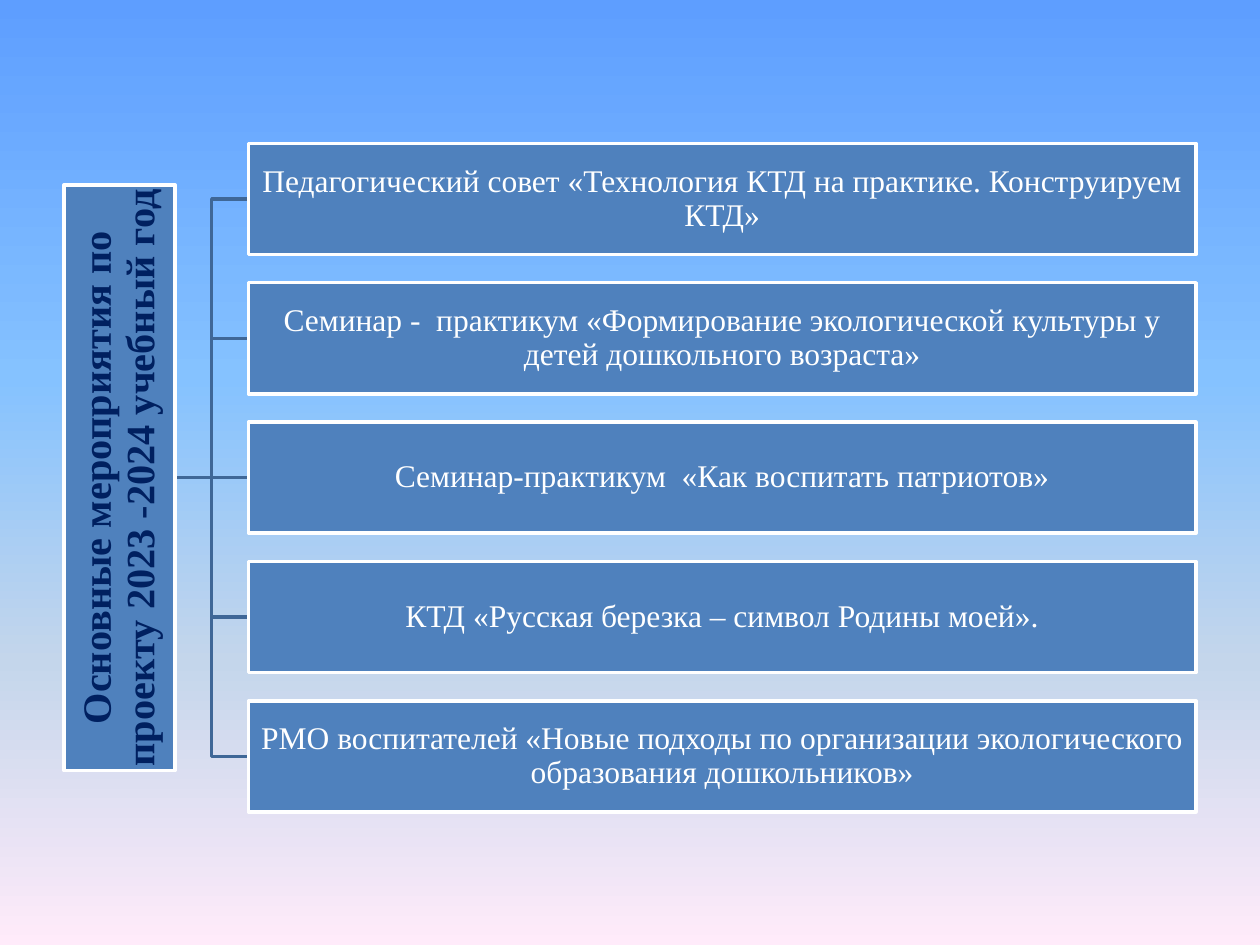
"""Build a slide with a hierarchy of project events for the school year."""
from copy import deepcopy
from dataclasses import dataclass

from lxml import etree
from pptx import Presentation
from pptx.dml.color import RGBColor
from pptx.enum import shapes, text
from pptx.oxml.ns import qn
from pptx import util as u


@dataclass(frozen=True)
class Theme:
    font: str = "Times New Roman"
    fill: str = "4F81BD"
    border: str = "FFFFFF"
    branch: str = "3F6797"
    title_color: str = "002060"
    event_color: str = "FFFFFF"
    title_size: int = 23
    event_size: int = 18
    line_width: int = 2
    backdrop: tuple = ((0, "5E9EFF"), (0.4, "85C2FF"), (0.7, "C4D6EB"), (1, "FFEBFA"))


@dataclass(frozen=True)
class Block:
    label: str
    center_x: float
    center_y: float
    width: float
    size: int
    color: str
    inset: float
    bold: bool = False
    rotation: int = 0


THEME = Theme()
HEIGHT = 2.24
PITCH = 2.81
MIDDLE = 9.63
TITLE_X = 2.41
TITLE_LENGTH = 11.81
TRUNK_X = 4.27
EVENT_LEFT = 5.01
EVENT_WIDTH = 19.1
TITLE = "Основные мероприятия по проекту 2023 -2024 учебный год"
EVENTS = (
    "Педагогический совет «Технология КТД на практике. Конструируем КТД»",
    "Семинар -  практикум «Формирование экологической культуры у детей дошкольного возраста»",
    "Семинар-практикум  «Как воспитать патриотов»",
    "КТД «Русская березка – символ Родины моей».",
    "РМО воспитателей «Новые подходы по организации экологического образования дошкольников»",
)


def apply(target: object, values: dict) -> None:
    """Set every attribute named in the values."""
    for name, value in values.items():
        setattr(target, name, value)


def style_line(line: object, color: str) -> None:
    """Give a line its colour and width."""
    line.color.rgb = RGBColor.from_string(color)
    line.width = u.Pt(THEME.line_width)


def paint_background(page: object) -> None:
    """Fill the page with the vertical gradient."""
    fill = page.background.fill
    fill.gradient()
    fill.gradient_angle = 270
    stops = page.element.find(".//" + qn("a:gsLst"))
    for _ in range(len(THEME.backdrop) - len(stops)):
        stops.append(deepcopy(stops[0]))
    for stop, (position, color) in zip(fill.gradient_stops, THEME.backdrop):
        stop.position = position
        stop.color.rgb = RGBColor.from_string(color)


def draw_branch(page: object, end_y: float) -> None:
    """Join the title to the event at the given height."""
    start_x = TITLE_X + HEIGHT / 2
    if end_y == MIDDLE:
        branch = page.shapes.add_connector(
            shapes.MSO_CONNECTOR.STRAIGHT,
            u.Cm(start_x), u.Cm(MIDDLE), u.Cm(EVENT_LEFT), u.Cm(MIDDLE))
        etree.SubElement(branch.element.spPr, qn("a:effectLst"))
    else:
        builder = page.shapes.build_freeform(u.Cm(start_x), u.Cm(MIDDLE))
        corners = ((TRUNK_X, MIDDLE), (TRUNK_X, end_y), (EVENT_LEFT, end_y))
        builder.add_line_segments([(u.Cm(x), u.Cm(y)) for x, y in corners], close=False)
        branch = builder.convert_to_shape()
        branch.fill.background()
        branch.shadow.inherit = False
    style_line(branch.line, THEME.branch)


def draw_block(page: object, block: Block) -> None:
    """Draw a bordered rectangle with centred text."""
    box = page.shapes.add_shape(
        shapes.MSO_SHAPE.RECTANGLE,
        u.Cm(block.center_x - block.width / 2), u.Cm(block.center_y - HEIGHT / 2),
        u.Cm(block.width), u.Cm(HEIGHT))
    box.rotation = block.rotation
    box.shadow.inherit = False
    box.fill.solid()
    box.fill.fore_color.rgb = RGBColor.from_string(THEME.fill)
    style_line(box.line, THEME.border)
    margins = {f"margin_{side}": u.Cm(block.inset) for side in ("left", "right", "top", "bottom")}
    apply(box.text_frame, {"word_wrap": True, "vertical_anchor": text.MSO_ANCHOR.MIDDLE, **margins})
    para = box.text_frame.paragraphs[0]
    apply(para, {"alignment": text.PP_ALIGN.CENTER, "line_spacing": 0.9})
    span = para.add_run()
    span.text = block.label
    apply(span.font, {"name": THEME.font, "size": u.Pt(block.size), "bold": block.bold})
    span.font.color.rgb = RGBColor.from_string(block.color)


def main() -> None:
    """Build and save the deck."""
    deck = Presentation()
    apply(deck, {"slide_width": u.Cm(25.4), "slide_height": u.Cm(19.05)})
    page = deck.slides.add_slide(deck.slide_layouts[6])
    paint_background(page)
    rows = [MIDDLE + (index - len(EVENTS) // 2) * PITCH for index in range(len(EVENTS))]
    for row in rows:
        draw_branch(page, row)
    draw_block(page, Block(TITLE, TITLE_X, MIDDLE, TITLE_LENGTH, THEME.title_size,
                           THEME.title_color, 0.04, bold=True, rotation=270))
    for label, row in zip(EVENTS, rows):
        draw_block(page, Block(label, EVENT_LEFT + EVENT_WIDTH / 2, row, EVENT_WIDTH,
                               THEME.event_size, THEME.event_color, 0.03))
    deck.save("out.pptx")


if __name__ == "__main__":
    main()
